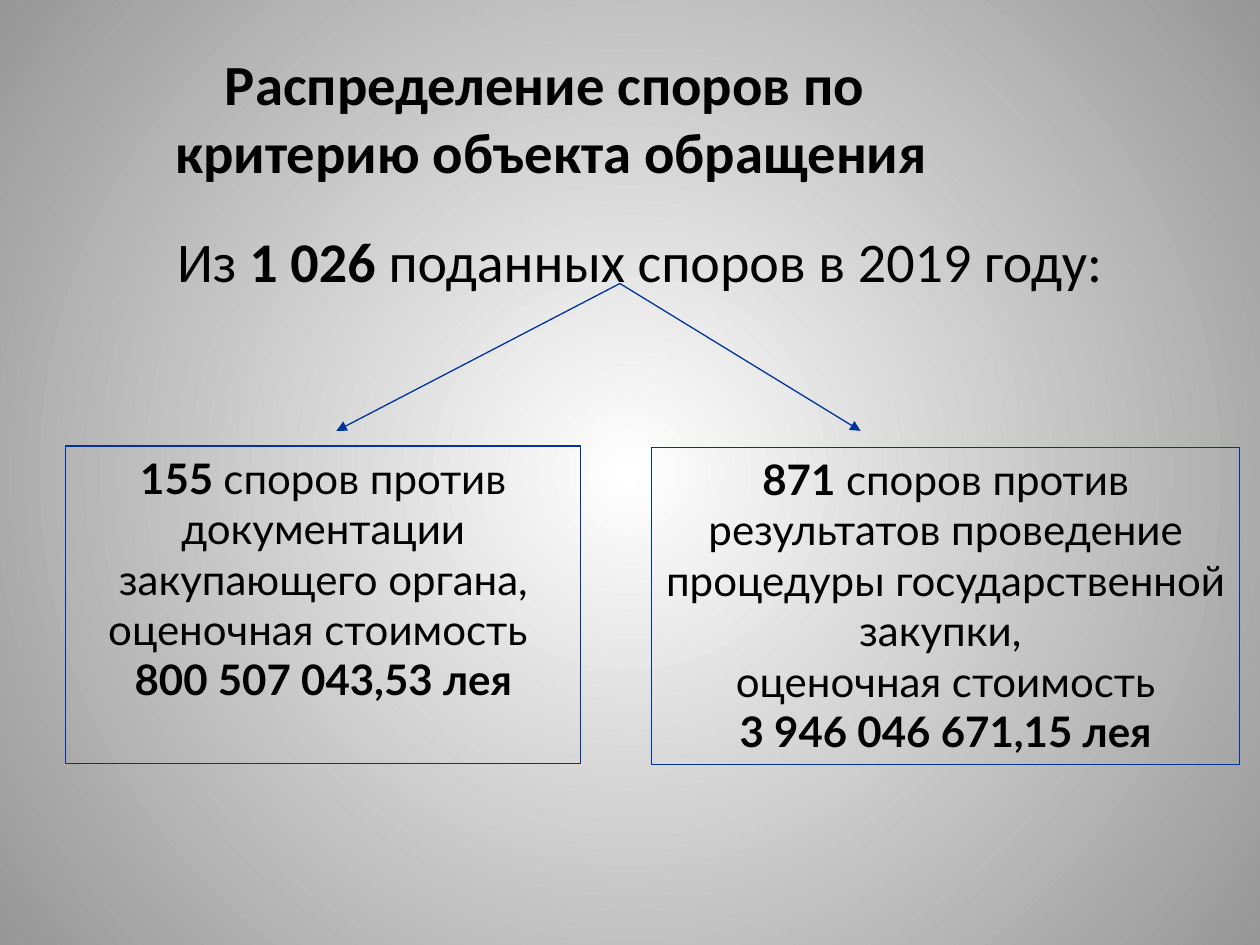
from dataclasses import dataclass

from lxml.etree import SubElement
from pptx import Presentation
from pptx.dml.color import RGBColor
from pptx.enum.shapes import MSO_CONNECTOR as Conn, MSO_SHAPE as Shape
from pptx.enum.text import MSO_ANCHOR as Anchor, MSO_AUTO_SIZE as AutoSize, PP_ALIGN as Align
from pptx.oxml import parse_xml
from pptx.oxml.ns import nsdecls, qn
from pptx.util import Inches, Pt

COLORS = {"text": "000000", "line": "003399", "center": "FFFFFF", "edge": "979797"}

Run = tuple[str, bool]


@dataclass
class Box:
    left: float
    top: float
    width: float
    height: float
    paragraphs: list[list[Run]]


@dataclass
class Arrow:
    start: tuple[float, float]
    end: tuple[float, float]


TITLE = Box(0.5, 0.3, 7.75, 1.25, [
    [("Распределение споров по \vкритерию объекта обращения", True)],
])
BODY = Box(0.33, 1.75, 9.5, 4.95, [
    [("Из ", False), ("1 026 ", True), ("поданных споров в 2019 году:", False)],
])
BOXES = [
    Box(0.52, 3.54, 4.09, 2.52, [
        [("155 ", True),
         ("споров против документации закупающего органа, оценочная стоимость ", False)],
        [("800 507 043,53 лея", True)],
    ]),
    Box(5.17, 3.55, 4.67, 2.52, [
        [("871", True),
         (" споров против результатов проведение процедуры государственной закупки, ", False)],
        [("оценочная стоимость", False)],
        [("3 946 046 671,15 лея", True)],
    ]),
]
FORK = (4.92, 2.25)
ARROWS = [Arrow(FORK, (2.67, 3.42)), Arrow(FORK, (6.83, 3.42))]


def color(name: str) -> RGBColor:
    return RGBColor.from_string(COLORS[name])


def set_background(s) -> None:
    stops = "".join(
        f'<a:gs pos="{pos}"><a:srgbClr val="{COLORS[name]}"/></a:gs>'
        for pos, name in ((0, "center"), (100000, "edge"))
    )
    bg = parse_xml(
        f'<p:bg {nsdecls("p", "a")}><p:bgPr><a:gradFill rotWithShape="1">'
        f'<a:gsLst>{stops}</a:gsLst><a:path path="circle">'
        '<a:fillToRect l="50000" t="50000" r="50000" b="50000"/></a:path>'
        '</a:gradFill><a:effectLst/></p:bgPr></p:bg>'
    )
    s.element.cSld.insert(0, bg)


def place(sp, box: Box) -> None:
    for name in ("left", "top", "width", "height"):
        setattr(sp, name, Inches(getattr(box, name)))


def write(sp, box: Box, font: str, size: float, anchor: Anchor) -> None:
    tf = sp.text_frame
    frame_format = {"word_wrap": True, "auto_size": AutoSize.NONE, "vertical_anchor": anchor}
    for name, value in frame_format.items():
        setattr(tf, name, value)
    for i, runs in enumerate(box.paragraphs):
        p = tf.paragraphs[0] if i == 0 else tf.add_paragraph()
        p.alignment = Align.CENTER
        p.space_before = Pt(0)
        for text, bold in runs:
            for j, line in enumerate(text.split("\v")):
                if j:
                    p.add_line_break()
                r = p.add_run()
                r.text = line
                for name, value in {"name": font, "size": Pt(size), "bold": bold}.items():
                    setattr(r.font, name, value)
                r.font.color.rgb = color("text")


def style_line(sp) -> None:
    sp.line.color.rgb = color("line")
    sp.line.width = Pt(0.75)


def remove_bullet(p) -> None:
    pPr = p._p.get_or_add_pPr()
    pPr.set("marL", "0")
    pPr.set("indent", "0")
    SubElement(pPr, qn("a:buNone"))


def draw_box(s, box: Box) -> None:
    sp = s.shapes.add_shape(Shape.RECTANGLE, 0, 0, 0, 0)
    place(sp, box)
    sp.shadow.inherit = False
    sp.fill.background()
    style_line(sp)
    write(sp, box, "Lato", 24, Anchor.TOP)


def draw_arrow(s, arrow: Arrow) -> None:
    points = [Inches(v) for v in (*arrow.start, *arrow.end)]
    sp = s.shapes.add_connector(Conn.STRAIGHT, *points)
    style_line(sp)
    SubElement(sp.line._get_or_add_ln(), qn("a:tailEnd"), type="triangle")
    SubElement(sp._element.spPr, qn("a:effectLst"))


def main() -> None:
    prs = Presentation()
    prs.slide_width, prs.slide_height = Inches(10), Inches(7.5)
    s = prs.slides.add_slide(prs.slide_layouts[1])
    set_background(s)

    title, body = s.shapes.title, s.placeholders[1]
    place(title, TITLE)
    write(title, TITLE, "Calibri", 32.4, Anchor.MIDDLE)
    place(body, BODY)
    write(body, BODY, "Calibri", 32, Anchor.TOP)
    remove_bullet(body.text_frame.paragraphs[0])

    for box in BOXES:
        draw_box(s, box)
    for arrow in ARROWS:
        draw_arrow(s, arrow)
    prs.save("out.pptx")


if __name__ == "__main__":
    main()
